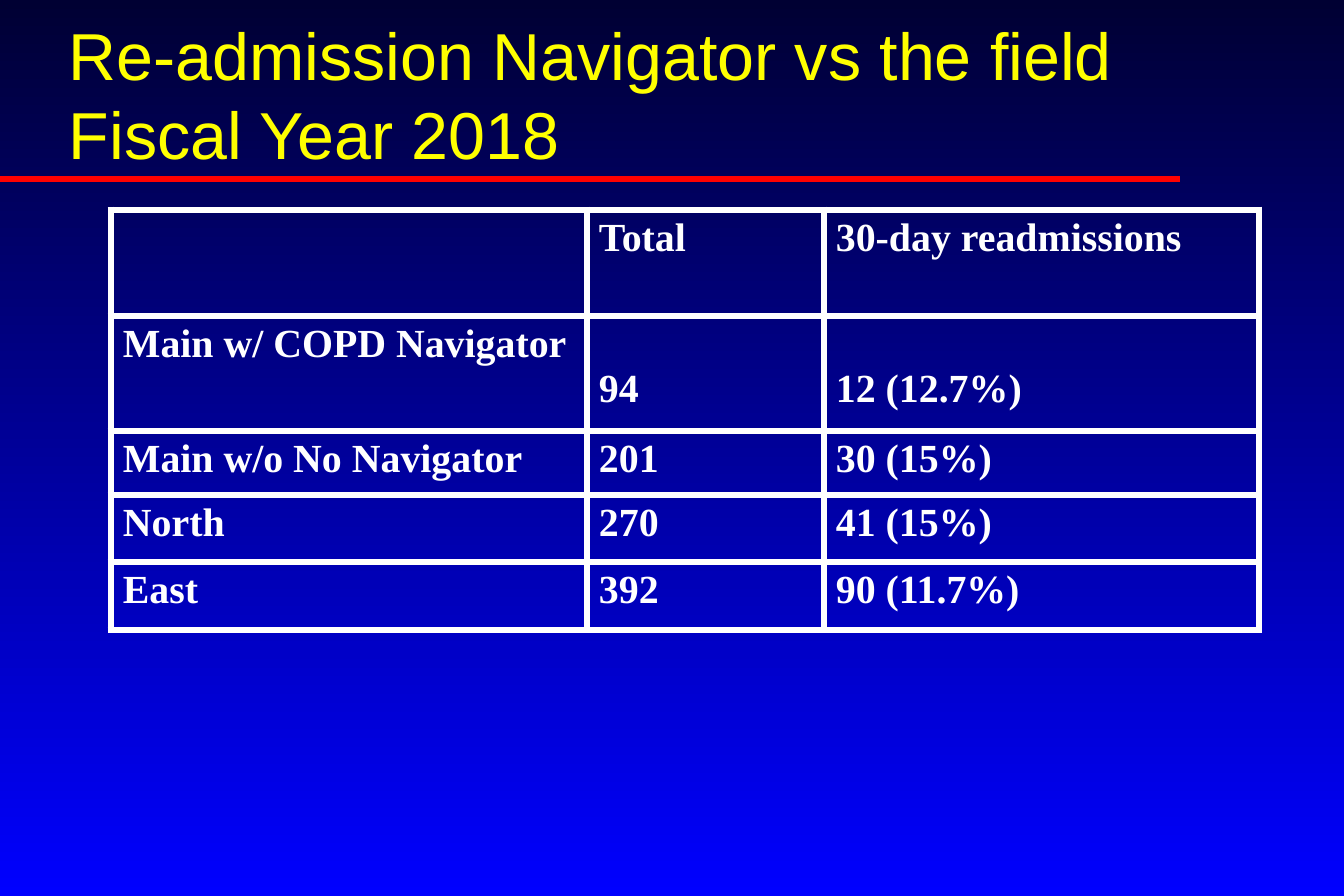
"""Build the slide on readmissions with and without a navigator."""
from lxml.etree import SubElement
from pptx import Presentation
from pptx.dml.color import RGBColor
from pptx.enum.shapes import MSO_CONNECTOR
from pptx.enum.text import MSO_ANCHOR, PP_ALIGN
from pptx.oxml.ns import qn
from pptx.util import Pt

PX = 7654
SIZE = (1344, 896)
HEX = {"top": "000033", "base": "0000FF", "rule": "FF0101",
       "title": "FFFF00", "text": "FFFFFF"}
TITLE = ("Re-admission Navigator vs the field", "Fiscal Year 2018")
ROWS = [
    ("", "Total", "30-day readmissions"),
    ("Main w/ COPD Navigator", "94", "12 (12.7%)"),
    ("Main w/o No Navigator", "201", "30 (15%)"),
    ("North", "270", "41 (15%)"),
    ("East", "392", "90 (11.7%)"),
]
WIDE = (476, 237, 435)
HIGH = (106, 115, 64, 67, 68)
LOW = {(1, 1), (1, 2)}


def tint(name):
    return RGBColor.from_string(HEX[name])


def write(para, text, size, face, hue, bold=False):
    run = para.add_run()
    run.text = text
    run.font.size = Pt(size)
    run.font.name = face
    run.font.bold = bold
    run.font.color.rgb = tint(hue)


def edge(cell):
    props = cell._tc.get_or_add_tcPr()
    for side in ("lnL", "lnR", "lnT", "lnB"):
        line = SubElement(props, qn(f"a:{side}"), w=str(Pt(4.5)))
        fill = SubElement(line, qn("a:solidFill"))
        SubElement(fill, qn("a:srgbClr"), val=HEX["text"])


def paint(slide):
    fill = slide.background.fill
    fill.gradient()
    fill.gradient_angle = 270
    for stop, name in zip(fill.gradient_stops, ("top", "base")):
        stop.color.rgb = tint(name)


def add_rule(slide):
    rule = slide.shapes.add_connector(
        MSO_CONNECTOR.STRAIGHT, 0, 179 * PX, 1180 * PX, 179 * PX)
    rule.line.color.rgb = tint("rule")
    rule.line.width = Pt(4)
    SubElement(rule._element.spPr, qn("a:effectLst"))


def add_title(slide):
    box = slide.shapes.title
    box.left, box.top, box.width, box.height = (
        n * PX for n in (57, 35, 1142, 144))
    frame = box.text_frame
    frame.word_wrap = True
    frame.vertical_anchor = MSO_ANCHOR.BOTTOM
    para = frame.paragraphs[0]
    para.alignment = PP_ALIGN.LEFT
    for i, text in enumerate(TITLE):
        if i:
            para.add_line_break()
        write(para, text, 40, "Arial", "title")


def add_grid(slide):
    grid = slide.shapes.add_table(
        len(ROWS), len(WIDE), 111 * PX, 210 * PX,
        sum(WIDE) * PX, sum(HIGH) * PX).table
    grid.first_row = grid.horz_banding = False
    for col, wide in zip(grid.columns, WIDE):
        col.width = wide * PX
    for r, row in enumerate(ROWS):
        grid.rows[r].height = HIGH[r] * PX
        for c, text in enumerate(row):
            cell = grid.cell(r, c)
            edge(cell)
            cell.fill.background()
            cell.margin_top = (51 if (r, c) in LOW else 6) * PX
            para = cell.text_frame.paragraphs[0]
            para.alignment = PP_ALIGN.LEFT
            if text:
                write(para, text, 24, "Times New Roman", "text", True)


def main():
    deck = Presentation()
    deck.slide_width, deck.slide_height = (n * PX for n in SIZE)
    slide = deck.slides.add_slide(deck.slide_layouts[5])
    paint(slide)
    add_rule(slide)
    add_title(slide)
    add_grid(slide)
    deck.save("out.pptx")


if __name__ == "__main__":
    main()
